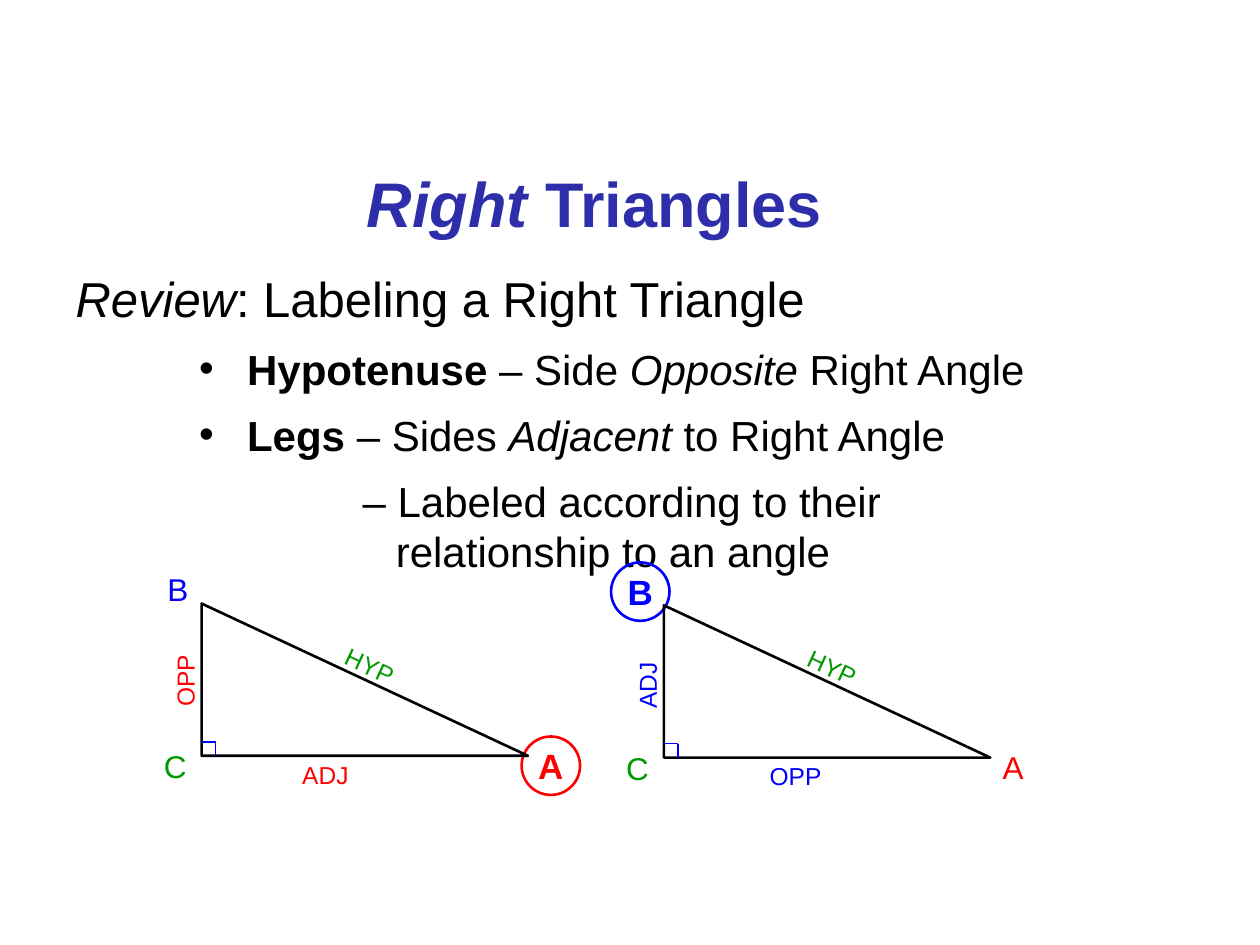
from lxml import etree
from pptx import Presentation
from pptx import util as u
from pptx.dml.color import RGBColor
from pptx.enum import shapes, text
from pptx.oxml import ns

BLACK, BLUE, RED, GREEN, NAVY = "000000", "0000FF", "FF0000", "009900", "2E2EAA"


def color(value):
    return RGBColor.from_string(value)


def place(shape, left, top, width, height):
    shape.left, shape.top = u.Pt(left), u.Pt(top)
    shape.width, shape.height = u.Pt(width), u.Pt(height)


def style(font, size, hue, bold=False, italic=False):
    font.name, font.size = "Arial", u.Pt(size)
    font.bold, font.italic = bold, italic
    font.color.rgb = color(hue)


def add_spans(para, spans, size, hue):
    for words, marks in spans:
        span = para.add_run()
        span.text = words
        style(span.font, size, hue, "b" in marks, "i" in marks)


def set_indent(para, margin, indent, bullet=None):
    props = para._p.get_or_add_pPr()
    props.set("marL", str(u.Pt(margin)))
    props.set("indent", str(u.Pt(indent)))
    if bullet:
        etree.SubElement(props, ns.qn("a:buChar")).set("char", bullet)
    else:
        etree.SubElement(props, ns.qn("a:buNone"))


def fill_title(title, left, top, width, height):
    place(title, left, top, width, height)
    frame = title.text_frame
    frame.auto_size = text.MSO_AUTO_SIZE.NONE
    frame.vertical_anchor = text.MSO_ANCHOR.MIDDLE
    para = frame.paragraphs[0]
    para.alignment = text.PP_ALIGN.CENTER
    add_spans(para, [("Right", "bi"), (" Triangles", "b")], 36, NAVY)


def fill_review(body, left, top, width, height):
    place(body, left, top, width, height)
    frame = body.text_frame
    frame.auto_size = text.MSO_AUTO_SIZE.NONE
    frame.vertical_anchor = text.MSO_ANCHOR.TOP
    lines = [
        ([("Review", "i"), (": Labeling a Right Triangle", "")], 28, 0, 0, None),
        ([("Hypotenuse", "b"), (" – Side ", ""), ("Opposite", "i"),
          (" Right Angle", "")], 24, 98, -27.4, "•"),
        ([("Legs ", "b"), ("– Sides ", ""), ("Adjacent", "i"),
          (" to Right Angle", "")], 24, 98, -27.4, "•"),
        ([("– Labeled according to their relationship to an angle", "")],
         24, 183, -19, None),
    ]
    for index, (spans, size, margin, indent, bullet) in enumerate(lines):
        para = frame.add_paragraph() if index else frame.paragraphs[0]
        para.space_before = u.Pt(9 if index else 0)
        set_indent(para, margin, indent, bullet)
        add_spans(para, spans, size, BLACK)


def add_label(page, words, left, top, width, height, size, hue, angle=0):
    box = page.shapes.add_textbox(u.Pt(left), u.Pt(top), u.Pt(width), u.Pt(height))
    box.rotation = angle
    box.text_frame.word_wrap = True
    box.text_frame.text = words
    style(box.text_frame.paragraphs[0].runs[0].font, size, hue)


def add_outline(page, preset, left, top, width, height, hue):
    shape = page.shapes.add_shape(
        preset, u.Pt(left), u.Pt(top), u.Pt(width), u.Pt(height))
    shape.shadow.inherit = False
    shape.fill.background()
    shape.line.color.rgb = color(hue)
    shape.line.width = u.Pt(1.5)
    return shape


def add_circled_letter(page, letter, left, top, size, hue):
    circle = add_outline(page, shapes.MSO_SHAPE.OVAL, left, top, size, size, hue)
    frame = circle.text_frame
    frame.margin_left = frame.margin_right = frame.margin_top = frame.margin_bottom = 0
    frame.word_wrap = False
    frame.vertical_anchor = text.MSO_ANCHOR.MIDDLE
    frame.text = letter
    frame.paragraphs[0].alignment = text.PP_ALIGN.CENTER
    style(frame.paragraphs[0].runs[0].font, 20, hue, bold=True)


def add_line(page, x1, y1, x2, y2, hue):
    line = page.shapes.add_connector(
        shapes.MSO_CONNECTOR.STRAIGHT, u.Pt(x1), u.Pt(y1), u.Pt(x2), u.Pt(y2))
    line.line.color.rgb = color(hue)
    line.line.width = u.Pt(1)
    etree.SubElement(line._element.spPr, ns.qn("a:effectLst"))


def add_triangle(page, left, top, width, height, angle, upright, base, base_left):
    vertices = {"B": (left - 26.6, top - 22.5, BLUE),
                "C": (left - 28.6, top + height - 8.5, GREEN),
                "A": (left + width, top + height - 9, RED)}
    x, y, accent = vertices.pop(angle)
    add_circled_letter(page, angle, x - 3.6, y - 2, 33.4, accent)

    outline = add_outline(
        page, shapes.MSO_SHAPE.ISOSCELES_TRIANGLE, left, top, width, height, BLACK)
    outline.adjustments[0] = 0
    corner, bottom = 8, top + height
    add_line(page, left, bottom - corner, left + corner, bottom - corner, BLUE)
    add_line(page, left + corner, bottom - corner, left + corner, bottom, BLUE)

    for letter, (x, y, hue) in vertices.items():
        add_label(page, letter, x, y, 28.8, 28.8, 18, hue)
    add_label(page, "HYP", left + 74.3, top + 24.5, 48, 24.5, 14, GREEN, 24.9)
    add_label(page, upright, left - 35.3, top + 27.7, 52, 24.5, 14, accent, 270)
    add_label(page, base, left + base_left, bottom - 1.4, 51, 24.5, 14, accent)


def main():
    deck = Presentation()
    deck.slide_width, deck.slide_height = u.Pt(720), u.Pt(540)
    page = deck.slides.add_slide(deck.slide_layouts[1])
    fill_title(page.shapes.title, 196, 90, 287.3, 51)
    fill_review(page.placeholders[1], 36, 149.8, 580, 180)
    add_triangle(page, 115.2, 344.9, 186.5, 87, "A", "OPP", "ADJ", 50.4)
    add_triangle(page, 379.4, 345.9, 186.5, 87, "B", "ADJ", "OPP", 53.3)
    deck.save("out.pptx")


if __name__ == "__main__":
    main()
